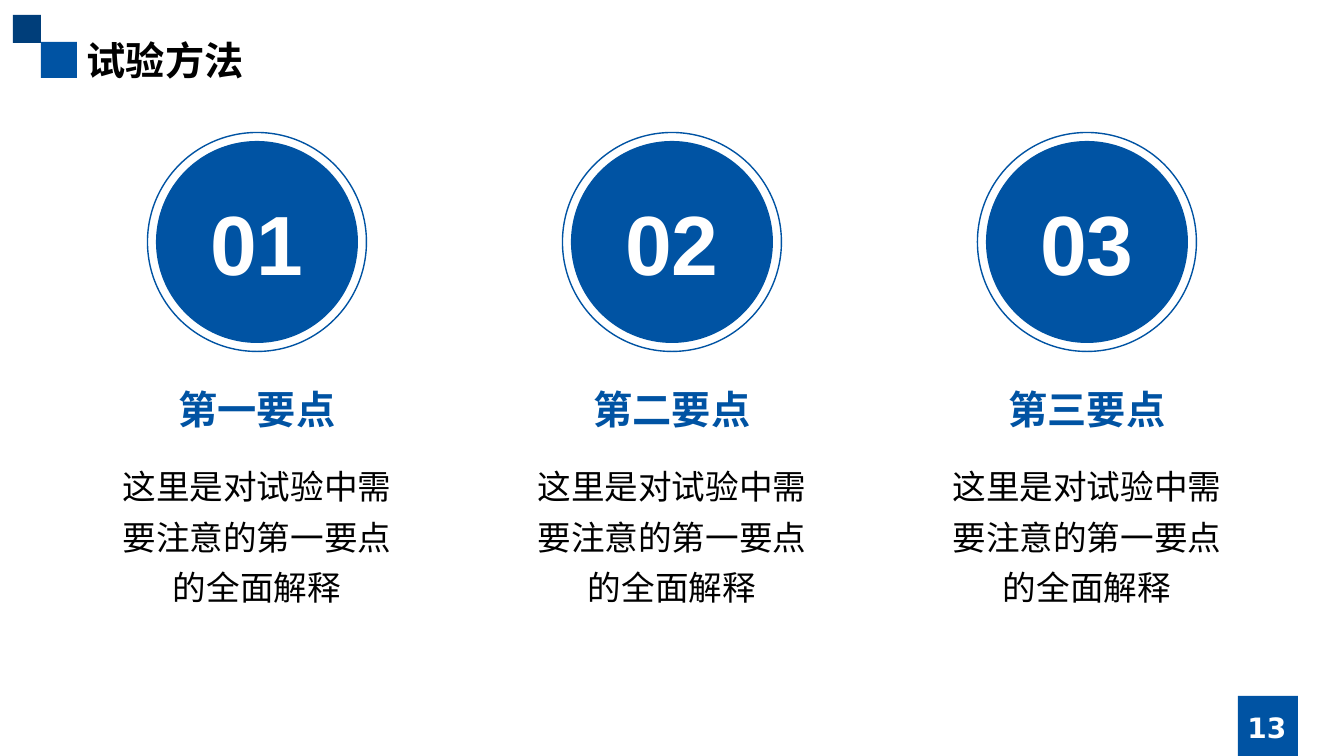
from lxml import etree
from pptx import Presentation
from pptx.dml.color import RGBColor
from pptx.enum.shapes import MSO_SHAPE
from pptx.enum.text import MSO_ANCHOR, PP_ALIGN
from pptx.oxml.ns import qn
from pptx.util import Emu, Pt

RECTANGLE, OVAL = MSO_SHAPE.RECTANGLE, MSO_SHAPE.OVAL
LEFT, CENTER = PP_ALIGN.LEFT, PP_ALIGN.CENTER
TOP, MIDDLE = MSO_ANCHOR.TOP, MSO_ANCHOR.MIDDLE

# Content
TITLE = "试验方法"
PAGE_NUMBER = "13"
POINTS = [
    ("01", "第一要点", "这里是对试验中需要注意的第一要点的全面解释"),
    ("02", "第二要点", "这里是对试验中需要注意的第一要点的全面解释"),
    ("03", "第三要点", "这里是对试验中需要注意的第一要点的全面解释"),
]

# Style
BLUE, NAVY, WHITE, BLACK = "0053A3", "003E7A", "FFFFFF", "000000"
CHINESE_FONT, NUMBER_FONT, BODY_FONT = "Noto Sans CJK SC", "DejaVu Sans", "Arial"

# Layout in px
SLIDE_WIDTH, SLIDE_HEIGHT = 1344, 756
EMU_PER_PX = 914400 / 100.8
COLUMN_PITCH = 415
CIRCLE_MIDDLE = 242
DISC_SIZE, RING_SIZE = 202, 219
TEXT_WIDTH = 297
SQUARES = [(41, 42, 36, BLUE), (13, 15, 28, NAVY), (1238, 696, 60, BLUE)]


def px(length):
    return Emu(round(length * EMU_PER_PX))


def color(value):
    return RGBColor.from_string(value)


def write(shape, text, size, text_color, font=BODY_FONT, bold=True,
          align=CENTER, anchor=TOP, line_spacing=None):
    frame = shape.text_frame
    frame.word_wrap = True
    frame.vertical_anchor = anchor
    paragraph = frame.paragraphs[0]
    paragraph.alignment = align
    if line_spacing:
        paragraph.line_spacing = line_spacing
    run = paragraph.add_run()
    run.text = text
    run.font.size = Pt(size)
    run.font.bold = bold
    run.font.color.rgb = color(text_color)
    run.font.name = font
    east_asian = etree.SubElement(run.font._element, qn("a:ea"))
    east_asian.set("typeface", CHINESE_FONT)


def add_text(slide, left, top, width, height, text, size, text_color, **style):
    box = slide.shapes.add_textbox(px(left), px(top), px(width), px(height))
    write(box, text, size, text_color, **style)


def add_figure(slide, kind, left, top, size, fill=None, line=None):
    shape = slide.shapes.add_shape(kind, px(left), px(top), px(size), px(size))
    shape.shadow.inherit = False
    if fill:
        shape.fill.solid()
        shape.fill.fore_color.rgb = color(fill)
    else:
        shape.fill.background()
    if line:
        shape.line.color.rgb = color(line)
        shape.line.width = Pt(1)
    else:
        shape.line.fill.background()
    return shape


def add_circle(slide, center, size, **style):
    return add_figure(slide, OVAL, center - size / 2, CIRCLE_MIDDLE - size / 2,
                      size, **style)


def main():
    presentation = Presentation()
    presentation.slide_width = px(SLIDE_WIDTH)
    presentation.slide_height = px(SLIDE_HEIGHT)
    slide = presentation.slides.add_slide(presentation.slide_layouts[6])

    # Corner squares, title and page number
    for left, top, size, fill in SQUARES:
        add_figure(slide, RECTANGLE, left, top, size, fill=fill)
    add_text(slide, 77, 31, 1190, 57, TITLE, 28, BLACK,
             font=CHINESE_FONT, align=LEFT)
    add_text(slide, 1190, 707, 154, 40, PAGE_NUMBER, 20, WHITE,
             font=NUMBER_FONT, anchor=MIDDLE)

    # One column per point, spread evenly about the slide's middle
    for index, (number, heading, explanation) in enumerate(POINTS):
        center = SLIDE_WIDTH / 2 + (index - (len(POINTS) - 1) / 2) * COLUMN_PITCH
        disc = add_circle(slide, center, DISC_SIZE, fill=BLUE)
        write(disc, number, 60, WHITE, anchor=MIDDLE)
        add_circle(slide, center, RING_SIZE, line=BLUE)
        text_left = center - TEXT_WIDTH / 2
        add_text(slide, text_left, 380, TEXT_WIDTH, 57, heading, 28, BLUE)
        add_text(slide, text_left, 451, TEXT_WIDTH, 163, explanation, 24, BLACK,
                 bold=False, line_spacing=1.25)

    presentation.save("out.pptx")


if __name__ == "__main__":
    main()
